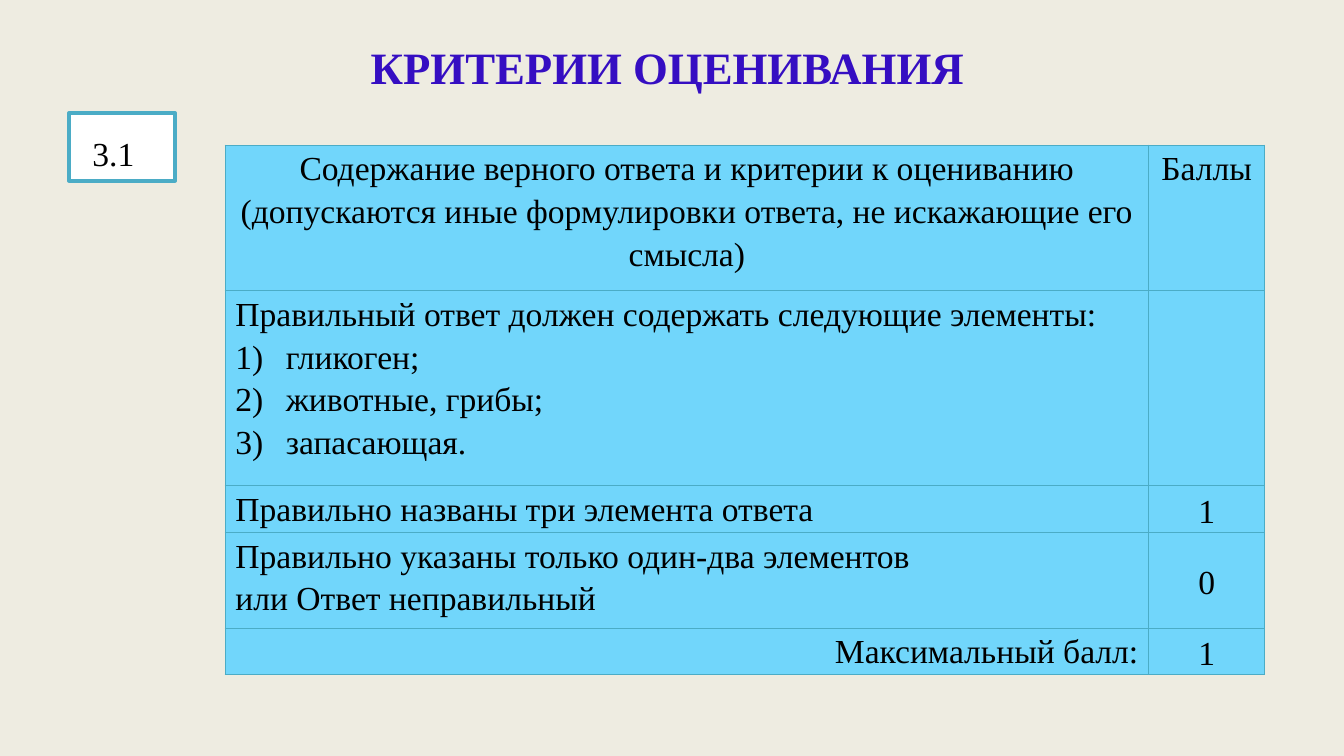
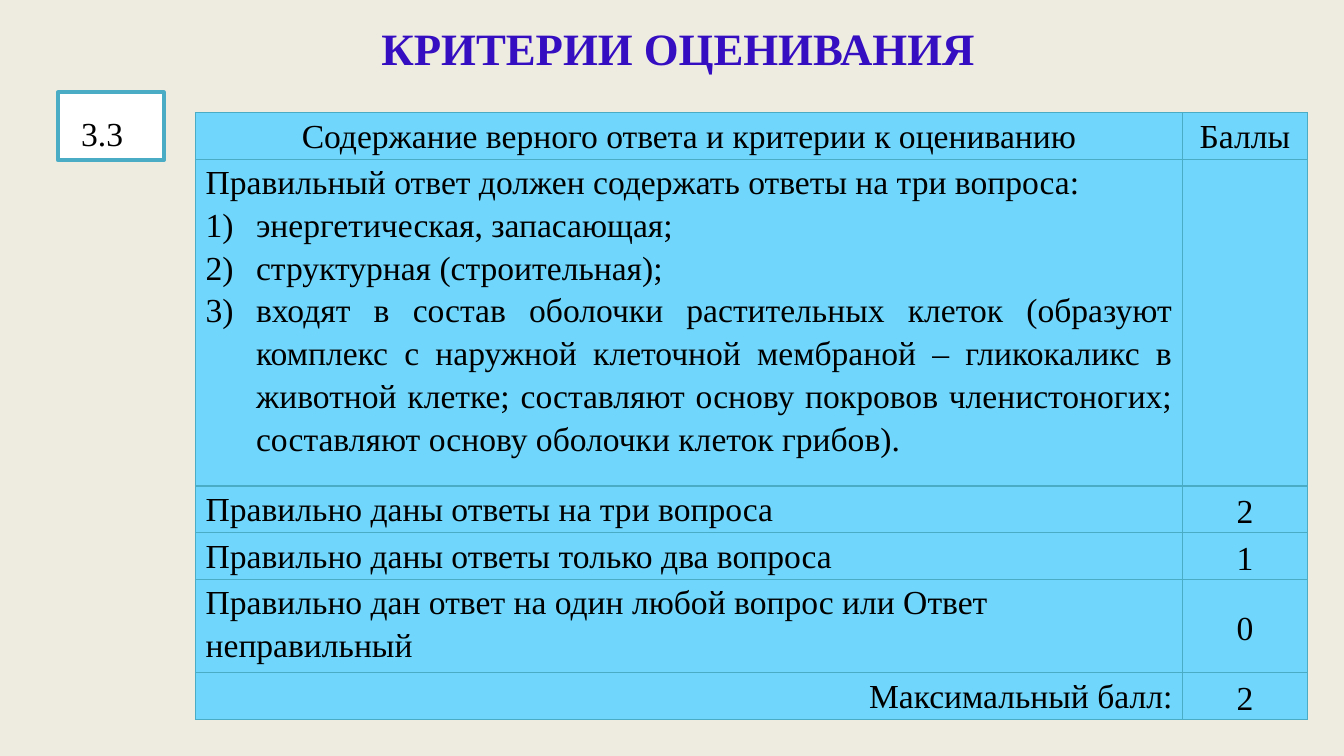
from dataclasses import dataclass

from pptx import Presentation
from pptx.dml.color import RGBColor
from pptx.enum.shapes import MSO_SHAPE
from pptx.enum.text import MSO_ANCHOR, MSO_AUTO_SIZE, PP_ALIGN
from pptx.oxml.ns import qn
from pptx.slide import Slide
from pptx.table import _Cell
from pptx.util import Pt
from lxml import etree

LEFT, CENTER, RIGHT, JUSTIFY = PP_ALIGN.LEFT, PP_ALIGN.CENTER, PP_ALIGN.RIGHT, PP_ALIGN.JUSTIFY
TOP, MIDDLE = MSO_ANCHOR.TOP, MSO_ANCHOR.MIDDLE
RECTANGLE = MSO_SHAPE.RECTANGLE
NO_AUTOFIT = MSO_AUTO_SIZE.NONE
TITLE_ONLY = 5


@dataclass(frozen=True)
class Theme:
    background: RGBColor = RGBColor.from_string("EEECE1")
    heading: RGBColor = RGBColor.from_string("350EC2")
    ink: RGBColor = RGBColor.from_string("000000")
    badge: RGBColor = RGBColor.from_string("FFFFFF")
    cell: RGBColor = RGBColor.from_string("71D6FB")
    rule: RGBColor = RGBColor.from_string("4BACC6")
    font: str = "Times New Roman"
    heading_size: float = 24
    body_size: float = 18
    line_spacing: float = 1.15
    badge_line: float = 2
    cell_line: float = 0.79
    list_indent: float = 27
    cell_margin: float = 5.4


THEME = Theme()
HEADING = "КРИТЕРИИ ОЦЕНИВАНИЯ"
CRITERIA_HEADER = "Содержание верного ответа и критерии к оцениванию"
SCORE_HEADER = "Баллы"
MAXIMUM = "Максимальный балл:"


@dataclass(frozen=True)
class Criterion:
    height: float
    lines: tuple[str, ...]
    score: str = ""
    align: PP_ALIGN = JUSTIFY
    answers: tuple[str, ...] = ()
    score_anchor: MSO_ANCHOR = MIDDLE


@dataclass(frozen=True)
class Task:
    number: str
    heading_at: tuple[float, float]
    number_at: tuple[float, float]
    table_at: tuple[float, float]
    columns: tuple[float, float]
    criteria: tuple[Criterion, ...]


TASKS = (
    Task(
        "3.1", (8.64, 10.1), (37, 60.5), (120.7, 77.8), (494.6, 62.3),
        (
            Criterion(
                78,
                (CRITERIA_HEADER, "(допускаются иные формулировки ответа, не искажающие его смысла)"),
                SCORE_HEADER, CENTER, score_anchor=TOP,
            ),
            Criterion(
                104.5,
                ("Правильный ответ должен содержать следующие элементы:",),
                answers=("гликоген;", "животные, грибы;", "запасающая."),
            ),
            Criterion(25, ("Правильно названы три элемента ответа",), "1"),
            Criterion(
                51.3,
                ("Правильно указаны только один-два элементов", "или Ответ неправильный"),
                "0",
            ),
            Criterion(25, (MAXIMUM,), "1", RIGHT),
        ),
    ),
    Task(
        "3.3", (14.4, 0.2), (31, 49.5), (104.8, 60.3), (528.8, 66.8),
        (
            Criterion(25, (CRITERIA_HEADER,), SCORE_HEADER, CENTER, score_anchor=TOP),
            Criterion(
                175.2,
                ("Правильный ответ должен содержать ответы на три вопроса:",),
                answers=(
                    "энергетическая, запасающая;",
                    "структурная (строительная);",
                    "входят в состав оболочки растительных клеток (образуют комплекс "
                    "с наружной клеточной мембраной – гликокаликс в животной клетке; "
                    "составляют основу покровов членистоногих; составляют основу "
                    "оболочки клеток грибов).",
                ),
            ),
            Criterion(25, ("Правильно даны ответы на три вопроса",), "2"),
            Criterion(25, ("Правильно даны ответы только два вопроса",), "1"),
            Criterion(
                50,
                ("Правильно дан ответ на один любой вопрос или Ответ неправильный",),
                "0", LEFT,
            ),
            Criterion(25, (MAXIMUM,), "2", RIGHT),
        ),
    ),
)


def style_font(font, size: float, color: RGBColor, bold: bool = False) -> None:
    font.name = THEME.font
    font.size = Pt(size)
    font.bold = bold
    font.color.rgb = color


def draw_heading(slide: Slide, at: tuple[float, float]) -> None:
    heading = slide.shapes.title
    heading.left, heading.top = map(Pt, at)
    heading.width, heading.height = Pt(697.7), Pt(51)
    frame = heading.text_frame
    frame.text = HEADING
    frame.auto_size = NO_AUTOFIT
    frame.vertical_anchor = MIDDLE
    paragraph = frame.paragraphs[0]
    paragraph.alignment = CENTER
    style_font(paragraph.runs[0].font, THEME.heading_size, THEME.heading, True)


def draw_number(slide: Slide, number: str, at: tuple[float, float]) -> None:
    badge = slide.shapes.add_shape(RECTANGLE, *map(Pt, at), Pt(56.8), Pt(36.4))
    badge.shadow.inherit = False
    badge.fill.solid()
    badge.fill.fore_color.rgb = THEME.badge
    badge.line.color.rgb = THEME.rule
    badge.line.width = Pt(THEME.badge_line)
    frame = badge.text_frame
    frame.text = number
    frame.vertical_anchor = TOP
    frame.margin_left, frame.margin_top = Pt(12.5), Pt(11)
    frame.margin_bottom = 0
    paragraph = frame.paragraphs[0]
    paragraph.alignment = LEFT
    style_font(paragraph.runs[0].font, THEME.body_size, THEME.ink)


def add_borders(cell: _Cell) -> None:
    properties = cell._tc.get_or_add_tcPr()
    for position, side in enumerate(("a:lnL", "a:lnR", "a:lnT", "a:lnB")):
        border = etree.Element(qn(side), w=str(Pt(THEME.cell_line)))
        fill = etree.SubElement(border, qn("a:solidFill"))
        etree.SubElement(fill, qn("a:srgbClr"), val=str(THEME.rule))
        properties.insert(position, border)


def number_paragraph(paragraph) -> None:
    properties = paragraph._p.get_or_add_pPr()
    indent = Pt(THEME.list_indent)
    properties.set("marL", str(indent))
    properties.set("indent", str(-indent))
    etree.SubElement(properties, qn("a:buAutoNum"), type="arabicParenR")


def fill_cell(
    cell: _Cell,
    lines: tuple[str, ...],
    align: PP_ALIGN,
    anchor: MSO_ANCHOR = TOP,
    answers: tuple[str, ...] = (),
) -> None:
    cell.fill.solid()
    cell.fill.fore_color.rgb = THEME.cell
    add_borders(cell)
    cell.margin_left = cell.margin_right = Pt(THEME.cell_margin)
    cell.margin_top = cell.margin_bottom = 0
    cell.vertical_anchor = anchor
    cell.text_frame.text = "\n".join(lines + answers)
    for index, paragraph in enumerate(cell.text_frame.paragraphs):
        paragraph.alignment = align
        paragraph.line_spacing = THEME.line_spacing
        if index >= len(lines):
            number_paragraph(paragraph)
        for run in paragraph.runs:
            style_font(run.font, THEME.body_size, THEME.ink)


def draw_criteria(slide: Slide, task: Task) -> None:
    height = sum(criterion.height for criterion in task.criteria)
    table = slide.shapes.add_table(
        len(task.criteria), len(task.columns),
        *map(Pt, task.table_at), Pt(sum(task.columns)), Pt(height),
    ).table
    table.first_row = False
    table.horz_banding = False
    for column, width in zip(table.columns, task.columns):
        column.width = Pt(width)
    for row, criterion in zip(table.rows, task.criteria):
        row.height = Pt(criterion.height)
        content, score = row.cells
        fill_cell(content, criterion.lines, criterion.align, answers=criterion.answers)
        fill_cell(score, (criterion.score,), CENTER, criterion.score_anchor)


def main() -> None:
    presentation = Presentation()
    presentation.slide_width, presentation.slide_height = Pt(720), Pt(405)
    background = presentation.slide_master.background.fill
    background.solid()
    background.fore_color.rgb = THEME.background
    for task in TASKS:
        slide = presentation.slides.add_slide(presentation.slide_layouts[TITLE_ONLY])
        draw_heading(slide, task.heading_at)
        draw_number(slide, task.number, task.number_at)
        draw_criteria(slide, task)
    presentation.save("out.pptx")


if __name__ == "__main__":
    main()
